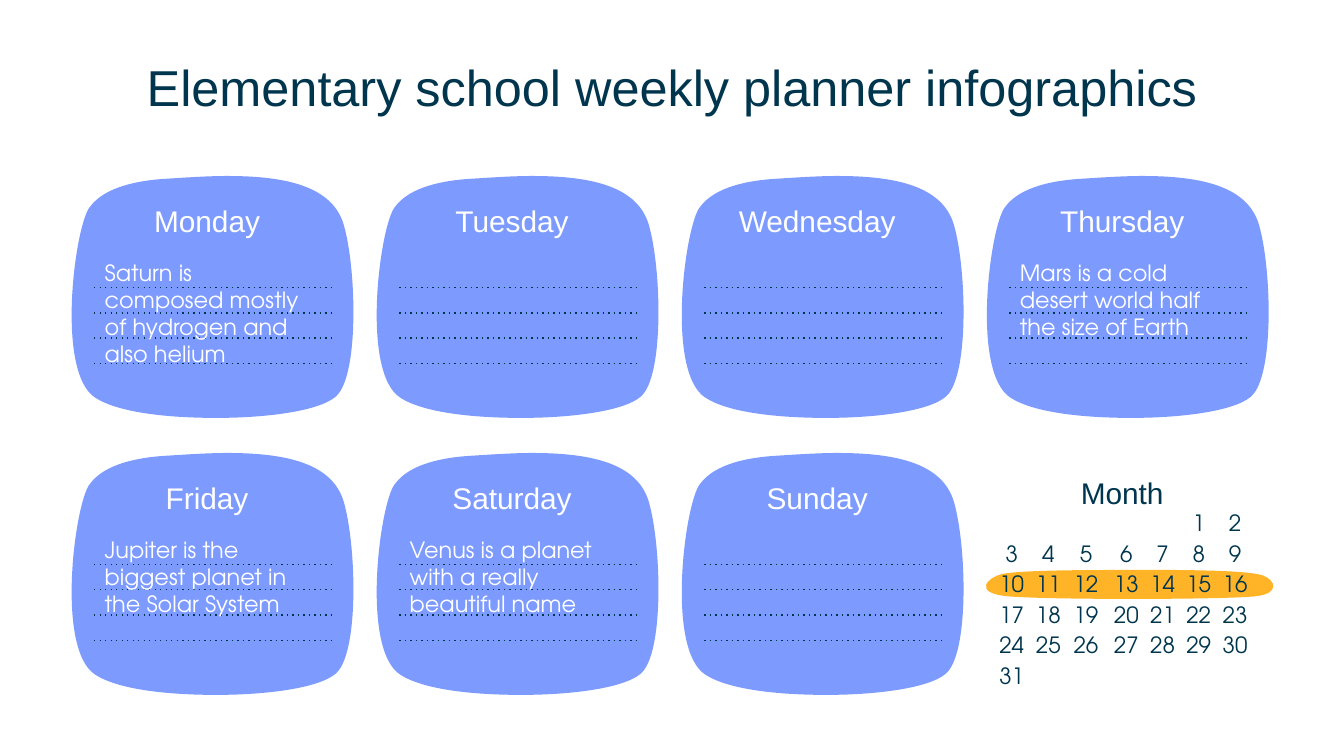
from lxml import etree
from pptx import Presentation
from pptx.dml.color import RGBColor
from pptx.enum.shapes import MSO_CONNECTOR
from pptx.enum.text import MSO_ANCHOR, PP_ALIGN
from pptx.oxml.ns import qn
from pptx.util import Pt

LEFT, CENTER = PP_ALIGN.LEFT, PP_ALIGN.CENTER
TOP, MIDDLE = MSO_ANCHOR.TOP, MSO_ANCHOR.MIDDLE
STRAIGHT = MSO_CONNECTOR.STRAIGHT
HEADING_FONT, BODY_FONT = "Arial", "TeX Gyre Adventor"
NAVY, BLUE, ORANGE, WHITE = "00354E", "7D9BFF", "FFB428", "FFFFFF"

# Rounded card outline: a start point, then two controls and an end per curve
CARD_OUTLINE = [
    (92.2, 0),
    (82.8, 0), (72, 0.7), (61.2, 1.4),
    (44.6, 2.2), (26.6, 5.8), (18.7, 16.6),
    (10.8, 25.9), (0, 105.1), (21.6, 118.8),
    (33.8, 126.7), (59.8, 129.6), (86.4, 129.6),
    (115.9, 129.6), (145.4, 125.3), (151.9, 116.6),
    (162.7, 103), (161.3, 49.7), (154.8, 26.6),
    (149, 5.8), (124.6, 0), (92.2, 0),
]
CARD_LEFT, CARD_TOP = 29.5, 94.3
COLUMN_STEP, ROW_STEP = 163.44, 148.4
RULE_COUNT, RULE_STEP = 4, 13.5

PLANS = [
    ("Monday", "Saturn is composed mostly of hydrogen and also helium"),
    ("Tuesday", ""),
    ("Wednesday", ""),
    ("Thursday", "Mars is a cold desert world half the size of Earth"),
    ("Friday", "Jupiter is the biggest planet in the Solar System"),
    ("Saturday", "Venus is a planet with a really beautiful name"),
    ("Sunday", ""),
]
DATE_LEFTS = [527.6, 547.2, 567.4, 589, 608.4, 627.8, 647.3]
DATE_TOP, WEEK_STEP = 275, 16.35
FIRST_WEEKDAY = 5

presentation = Presentation()
presentation.slide_width, presentation.slide_height = Pt(720), Pt(405)
slide = presentation.slides.add_slide(presentation.slide_layouts[6])
shapes = slide.shapes


def add_text(words, left, top, width, height, size, font, colour,
             align=CENTER, anchor=TOP):
    frame = shapes.add_textbox(Pt(left), Pt(top), Pt(width), Pt(height)).text_frame
    frame.text = words
    frame.word_wrap = True
    frame.vertical_anchor = anchor
    frame.margin_left = frame.margin_right = Pt(7.2)
    frame.margin_top = frame.margin_bottom = Pt(7.2)
    paragraph = frame.paragraphs[0]
    paragraph.alignment = align
    run_font = paragraph.runs[0].font
    run_font.size, run_font.name = Pt(size), font
    run_font.color.rgb = RGBColor.from_string(colour)


def add_card(left, top, colour, x_scale=1, y_scale=1):
    """Draw the card outline, turning each three segments into one curve."""
    points = [(Pt(left + x * x_scale), Pt(top + y * y_scale)) for x, y in CARD_OUTLINE]
    builder = shapes.build_freeform(*points[0])
    builder.add_line_segments(points[1:], close=True)
    card = builder.convert_to_shape()
    outline = next(card.element.iter(qn("a:path")))
    segments = outline.findall(qn("a:lnTo"))
    for index, segment in enumerate(segments):
        if index % 3 == 0:
            curve = etree.SubElement(outline, qn("a:cubicBezTo"))
        curve.append(segment[0])
        outline.remove(segment)
    outline.append(outline.find(qn("a:close")))
    card.shadow.inherit = False
    card.fill.solid()
    card.fill.fore_color.rgb = RGBColor.from_string(colour)
    card.line.fill.background()


add_text("Elementary school weekly planner infographics", 36, 32.4, 648, 28,
         27, HEADING_FONT, NAVY, anchor=MIDDLE)

# Day cards, four to a row
for index, (day, note) in enumerate(PLANS):
    row, column = divmod(index, 4)
    left = CARD_LEFT + column * COLUMN_STEP
    top = CARD_TOP + row * ROW_STEP
    add_card(left, top, BLUE)
    for rule in range(RULE_COUNT):
        y = Pt(top + 59.8 + rule * RULE_STEP)
        writing_line = shapes.add_connector(
            STRAIGHT, Pt(left + 20.9), y, Pt(left + 148.4), y)
        writing_line.line.width = Pt(0.75)
        writing_line.line.color.rgb = RGBColor.from_string(NAVY)
        properties = writing_line.element.spPr
        etree.SubElement(properties.find(qn("a:ln")), qn("a:prstDash"), val="dot")
        etree.SubElement(properties, qn("a:effectLst"))
    if note:
        add_text(note, left + 19.5, top + 37.5, 124.6, 52.6,
                 12, BODY_FONT, WHITE, align=LEFT)
    add_text(day, left + 12.3, top + 7.2, 138.2, 26.6, 16, HEADING_FONT, WHITE)

# Month calendar with the current week highlighted
add_card(519.1, 305.3, ORANGE, x_scale=1.02, y_scale=0.12)
for date in range(1, 32):
    week, weekday = divmod(date - 1 + FIRST_WEEKDAY, 7)
    add_text(str(date), DATE_LEFTS[weekday], DATE_TOP + week * WEEK_STEP, 28.8, 10,
             12, BODY_FONT, NAVY, anchor=MIDDLE)
add_text("Month", 532.1, 247, 138.2, 26.6, 16, HEADING_FONT, NAVY)

presentation.save("out.pptx")
